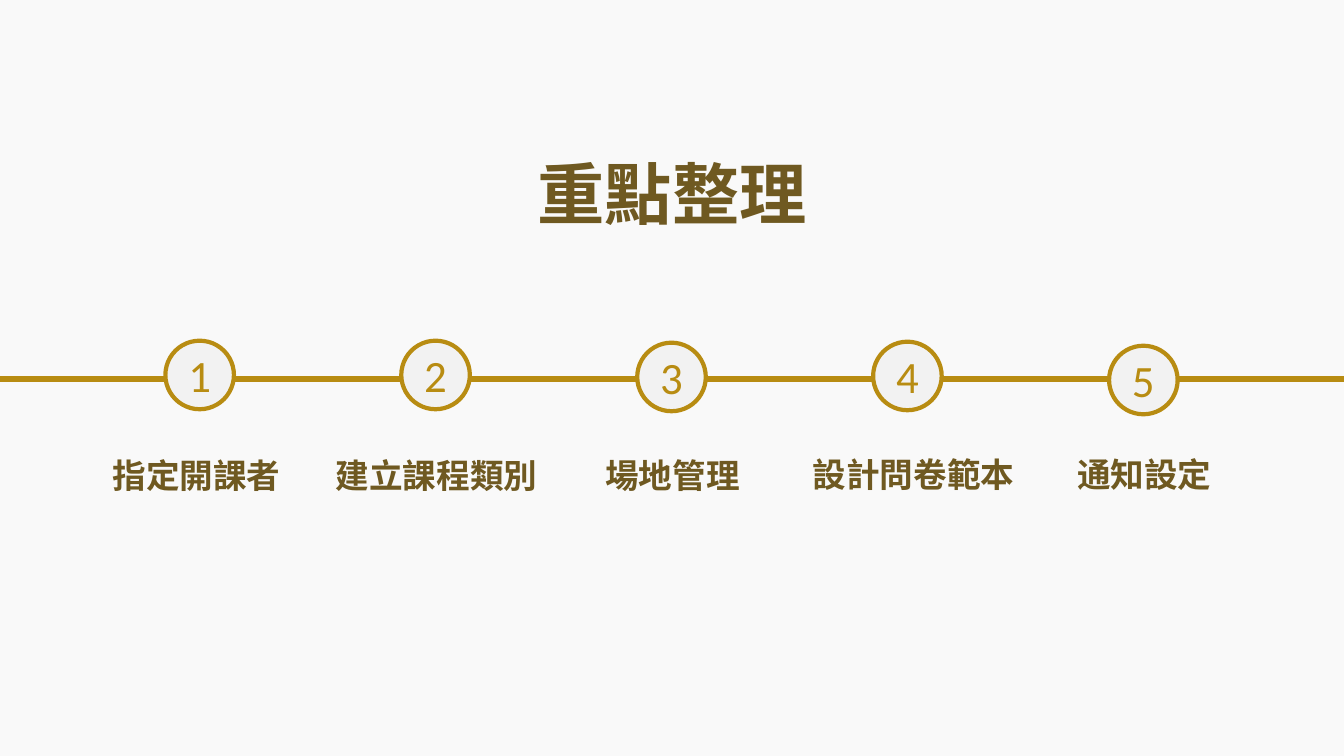
from lxml import etree
from pptx import Presentation
from pptx.dml.color import RGBColor
from pptx.enum.shapes import MSO_CONNECTOR, MSO_SHAPE
from pptx.enum.text import MSO_ANCHOR, MSO_AUTO_SIZE, PP_ALIGN
from pptx.oxml.ns import qn
from pptx.util import Inches, Pt

BACKGROUND = RGBColor(0xF9, 0xF9, 0xF9)
CIRCLE_FILL = RGBColor(0xF2, 0xF2, 0xF2)
GOLD = RGBColor(0xB8, 0x8C, 0x12)
BROWN = RGBColor(0x6F, 0x59, 0x21)
CJK_FONT = "Noto Sans CJK SC"
NUMBER_FONT = "Calibri"

WIDTH, HEIGHT = 13.33, 7.5
LINE_Y = HEIGHT / 2 + 0.01
COLUMN = 2.34           # distance between two steps
FIRST_CENTER = 1.98
DIAMETER = 0.68
LABEL_WIDTH, LABEL_HEIGHT = 3.43, 0.5

# Step name, top of its circle, centre and top of its label
STEPS = [
    ("指定開課者", 3.38, 1.95, 4.46),
    ("建立課程類別", 3.38, 4.33, 4.46),
    ("場地管理", 3.40, 6.67, 4.46),
    ("設計問卷範本", 3.39, 9.06, 4.45),
    ("通知設定", 3.43, 11.35, 4.45),
]


def write_text(shape, text, size, color, font=CJK_FONT, bold=False,
               anchor=MSO_ANCHOR.MIDDLE):
    frame = shape.text_frame
    frame.word_wrap = True
    frame.auto_size = MSO_AUTO_SIZE.NONE
    frame.vertical_anchor = anchor
    paragraph = frame.paragraphs[0]
    paragraph.alignment = PP_ALIGN.CENTER
    run = paragraph.add_run()
    run.text = text
    run.font.size = Pt(size)
    run.font.bold = bold
    run.font.color.rgb = color
    run.font.name = font
    # East Asian characters take their font from a separate element
    east_asian = etree.SubElement(run.font._element, qn("a:ea"))
    east_asian.set("typeface", font)


presentation = Presentation()
presentation.slide_width = Inches(WIDTH)
presentation.slide_height = Inches(HEIGHT)
slide = presentation.slides.add_slide(presentation.slide_layouts[5])
slide.background.fill.solid()
slide.background.fill.fore_color.rgb = BACKGROUND

# Title
title = slide.shapes.title
title.left, title.top = Inches(4.54), Inches(1.4)
title.width, title.height = Inches(4.25), Inches(1.02)
write_text(title, "重點整理", 48, BROWN, bold=True)

# Timeline across the slide
timeline = slide.shapes.add_connector(
    MSO_CONNECTOR.STRAIGHT, 0, Inches(LINE_Y), Inches(WIDTH), Inches(LINE_Y))
timeline.line.color.rgb = GOLD
timeline.line.width = Pt(3.75)
etree.SubElement(timeline._element.spPr, qn("a:effectLst"))

# Numbered circles with their labels
for index, (name, circle_top, label_center, label_top) in enumerate(STEPS):
    circle_left = FIRST_CENTER + index * COLUMN - DIAMETER / 2
    circle = slide.shapes.add_shape(
        MSO_SHAPE.OVAL, Inches(circle_left), Inches(circle_top),
        Inches(DIAMETER), Inches(DIAMETER))
    circle.shadow.inherit = False
    circle.fill.solid()
    circle.fill.fore_color.rgb = CIRCLE_FILL
    circle.line.color.rgb = GOLD
    circle.line.width = Pt(3)
    write_text(circle, str(index + 1), 32, GOLD, font=NUMBER_FONT)

    label = slide.shapes.add_textbox(
        Inches(label_center - LABEL_WIDTH / 2), Inches(label_top),
        Inches(LABEL_WIDTH), Inches(LABEL_HEIGHT))
    write_text(label, name, 24, BROWN, bold=True, anchor=MSO_ANCHOR.TOP)

presentation.save("out.pptx")
